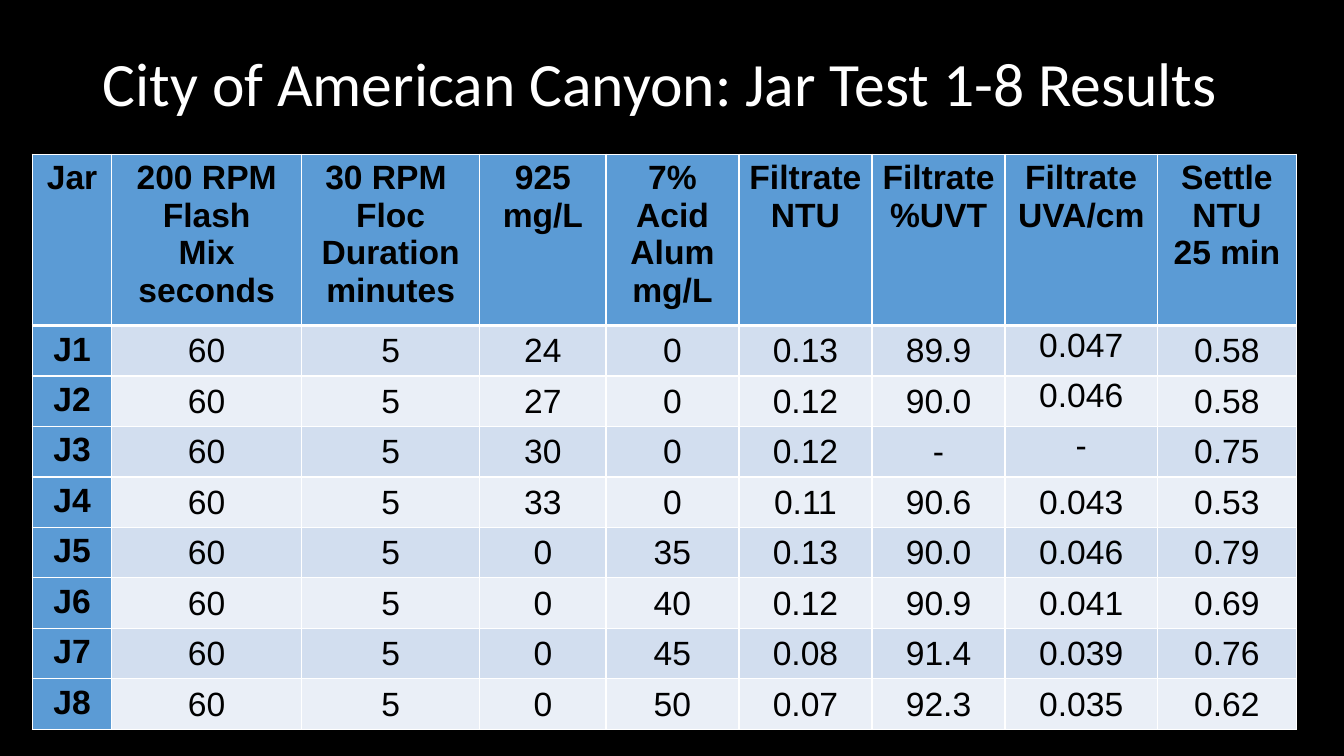
from lxml.etree import SubElement
from pptx import Presentation
from pptx.dml.color import RGBColor
from pptx.enum.text import MSO_ANCHOR, PP_ALIGN
from pptx.oxml.ns import qn
from pptx.util import Inches, Pt

HEADS = ["Jar", "200 RPM\nFlash\nMix\nseconds", "30 RPM \nFloc\nDuration\nminutes",
         "925\nmg/L", "7% Acid Alum\nmg/L", "Filtrate\nNTU", "Filtrate\n%UVT",
         "Filtrate\nUVA/cm", "Settle\nNTU\n25 min"]
WIDTHS = [0.79, 1.88, 1.77, 1.25, 1.32, 1.32, 1.32, 1.51, 1.38]

# Columns that vary by jar: 925, alum, NTU, UVT, UVA, settled NTU
TESTS = [
    ["24", "0", "0.13", "89.9", "0.047", "0.58"],
    ["27", "0", "0.12", "90.0", "0.046", "0.58"],
    ["30", "0", "0.12", "-", "-", "0.75"],
    ["33", "0", "0.11", "90.6", "0.043", "0.53"],
    ["0", "35", "0.13", "90.0", "0.046", "0.79"],
    ["0", "40", "0.12", "90.9", "0.041", "0.69"],
    ["0", "45", "0.08", "91.4", "0.039", "0.76"],
    ["0", "50", "0.07", "92.3", "0.035", "0.62"],
]
UVA = 7       # column of UVA/cm
RAISED = 3    # its first values sit at the top of the cell


def color(code):
    return RGBColor.from_string(code)


class Board:
    ink, paper, back = "000000", "FFFFFF", "000000"
    accent, bands = "5B9BD5", ("EAEFF7", "D2DEEF")

    def __init__(self, deck):
        self.slide = deck.slides.add_slide(deck.slide_layouts[6])
        fill = self.slide.background.fill
        fill.solid()
        fill.fore_color.rgb = color(self.back)

    def text(self, para, words, font, size, tint, bold=False):
        run = para.add_run()
        run.text = words
        run.font.name, run.font.size, run.font.bold = font, Pt(size), bold
        run.font.color.rgb = color(tint)

    def title(self, words, left, top, width, height):
        box = self.slide.shapes.add_textbox(
            Inches(left), Inches(top), Inches(width), Inches(height))
        frame = box.text_frame
        frame.word_wrap = True
        frame.vertical_anchor = MSO_ANCHOR.MIDDLE
        para = frame.paragraphs[0]
        para.line_spacing = 0.9
        self.text(para, words, "Calibri", 44, self.paper)

    def edge(self, cell, side, width):
        line = SubElement(cell._tc.get_or_add_tcPr(), qn("a:" + side), w=str(Pt(width)))
        fill = SubElement(line, qn("a:solidFill"))
        SubElement(fill, qn("a:srgbClr"), val=self.paper)

    def cell(self, cell, words, row, col):
        head = row == 0 or col == 0
        # Borders come before the fill in the cell properties
        for side in ("lnL", "lnR", "lnT", "lnB"):
            thick = (row, side) in ((0, "lnB"), (1, "lnT"))
            self.edge(cell, side, 3 if thick else 1)
        cell.fill.solid()
        cell.fill.fore_color.rgb = color(self.accent if head else self.bands[row % 2])
        if not head:
            cell.margin_left = cell.margin_right = cell.margin_top = Inches(0.01)
            cell.margin_bottom = 0
            if col != UVA or row > RAISED:
                cell.vertical_anchor = MSO_ANCHOR.MIDDLE
        frame = cell.text_frame
        for num, part in enumerate(words.split("\n")):
            para = frame.add_paragraph() if num else frame.paragraphs[0]
            para.alignment = PP_ALIGN.CENTER
            self.text(para, part, "Arial", 24, self.ink, head)

    def table(self, rows, widths, left, top, width, height, step):
        frame = self.slide.shapes.add_table(
            len(rows), len(widths), Inches(left), Inches(top),
            Inches(width), Inches(height))
        grid = frame.table
        grid.first_col = True
        for col, size in zip(grid.columns, widths):
            col.width = Inches(size)
        for r, row in enumerate(rows):
            grid.rows[r].height = Inches(step)
            for c, words in enumerate(row):
                self.cell(grid.cell(r, c), words, r, c)
        frame.height = Inches(height)


def main():
    deck = Presentation()
    deck.slide_width, deck.slide_height = Inches(13.33), Inches(7.5)
    board = Board(deck)

    # Title
    board.title("City of American Canyon: Jar Test 1-8 Results", 0.92, 0.13, 11.5, 1.45)

    # Results: every jar has the same mix and floc times
    jars = [[f"J{num}", "60", "5"] + test for num, test in enumerate(TESTS, 1)]
    board.table([HEADS] + jars, WIDTHS, 0.32, 1.53, 12.54, 5.7, 0.41)

    deck.save("out.pptx")


if __name__ == "__main__":
    main()
